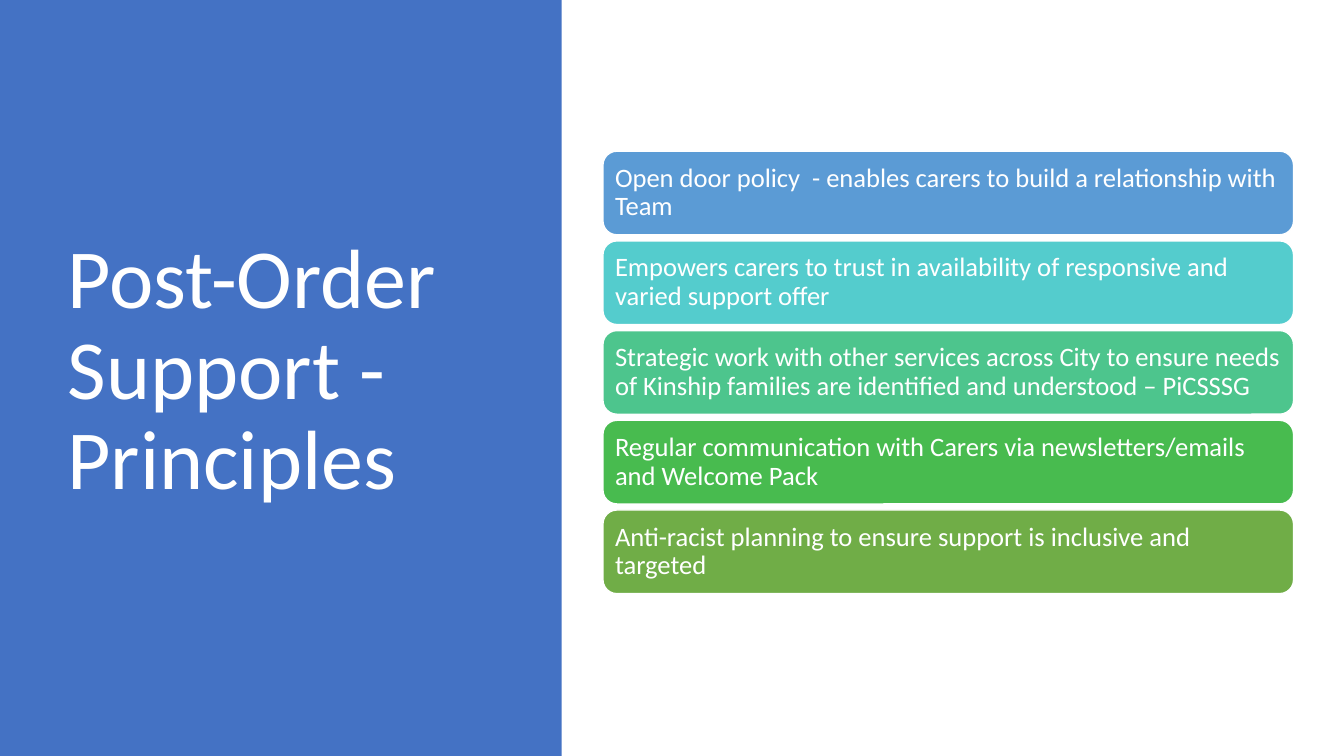
from pptx import Presentation
from pptx.dml.color import RGBColor
from pptx.enum.shapes import MSO_SHAPE
from pptx.enum.text import MSO_ANCHOR, MSO_AUTO_SIZE, PP_ALIGN
from pptx.util import Pt

PX = 9144
FONT = "Calibri"
WHITE = RGBColor(0xFF, 0xFF, 0xFF)
BLUE = RGBColor(0x44, 0x72, 0xC4)
SKY = RGBColor(0x5B, 0x9B, 0xD5)
AQUA = RGBColor(0x54, 0xCC, 0xCD)
MINT = RGBColor(0x4D, 0xC5, 0x8D)
GREEN = RGBColor(0x48, 0xBB, 0x4F)
OLIVE = RGBColor(0x70, 0xAD, 0x47)

CARDS = [
    ("Open door policy  - enables carers to build a relationship with Team", SKY),
    ("Empowers carers to trust in availability of responsive and varied support offer", AQUA),
    ("Strategic work with other services across City to ensure needs of Kinship families "
     "are identified and understood – PiCSSSG", MINT),
    ("Regular communication with Carers via newsletters/emails and Welcome Pack", GREEN),
    ("Anti-racist planning to ensure support is inclusive and targeted", OLIVE),
]
TOP, STEP = 150, 89


def scale(*sizes):
    return [size * PX for size in sizes]


def write(frame, text, size):
    frame.text = text
    frame.word_wrap = True
    frame.auto_size = MSO_AUTO_SIZE.NONE
    frame.vertical_anchor = MSO_ANCHOR.MIDDLE
    line = frame.paragraphs[0]
    line.alignment = PP_ALIGN.LEFT
    line.line_spacing = 0.9
    font = line.runs[0].font
    font.name = FONT
    font.size = Pt(size)
    font.color.rgb = WHITE


def add_block(slide, kind, box, color):
    block = slide.shapes.add_shape(kind, *scale(*box))
    block.shadow.inherit = False
    block.fill.solid()
    block.fill.fore_color.rgb = color
    block.line.fill.background()
    return block


def add_panel(slide):
    panel = add_block(slide, MSO_SHAPE.RECTANGLE, (0, 0, 557, 750), BLUE)
    slide.shapes.title.element.addprevious(panel.element)


def set_title(slide, text):
    title = slide.shapes.title
    title.left, title.top, title.width, title.height = scale(57, 68, 416, 602)
    write(title.text_frame, text, 60)


def add_card(slide, top, text, color):
    card = add_block(slide, MSO_SHAPE.ROUNDED_RECTANGLE, (598, top, 685, 83), color)
    card.line.color.rgb = WHITE
    card.line.width = Pt(1)
    frame = card.text_frame
    frame.margin_left = frame.margin_right = 8 * PX
    frame.margin_top = frame.margin_bottom = 8 * PX
    write(frame, text, 19)


def main():
    deck = Presentation()
    deck.slide_width, deck.slide_height = scale(1333, 750)
    slide = deck.slides.add_slide(deck.slide_layouts[5])
    add_panel(slide)
    set_title(slide, "Post-Order Support - Principles")
    for row, (text, color) in enumerate(CARDS):
        add_card(slide, TOP + row * STEP, text, color)
    deck.save("out.pptx")


if __name__ == "__main__":
    main()
